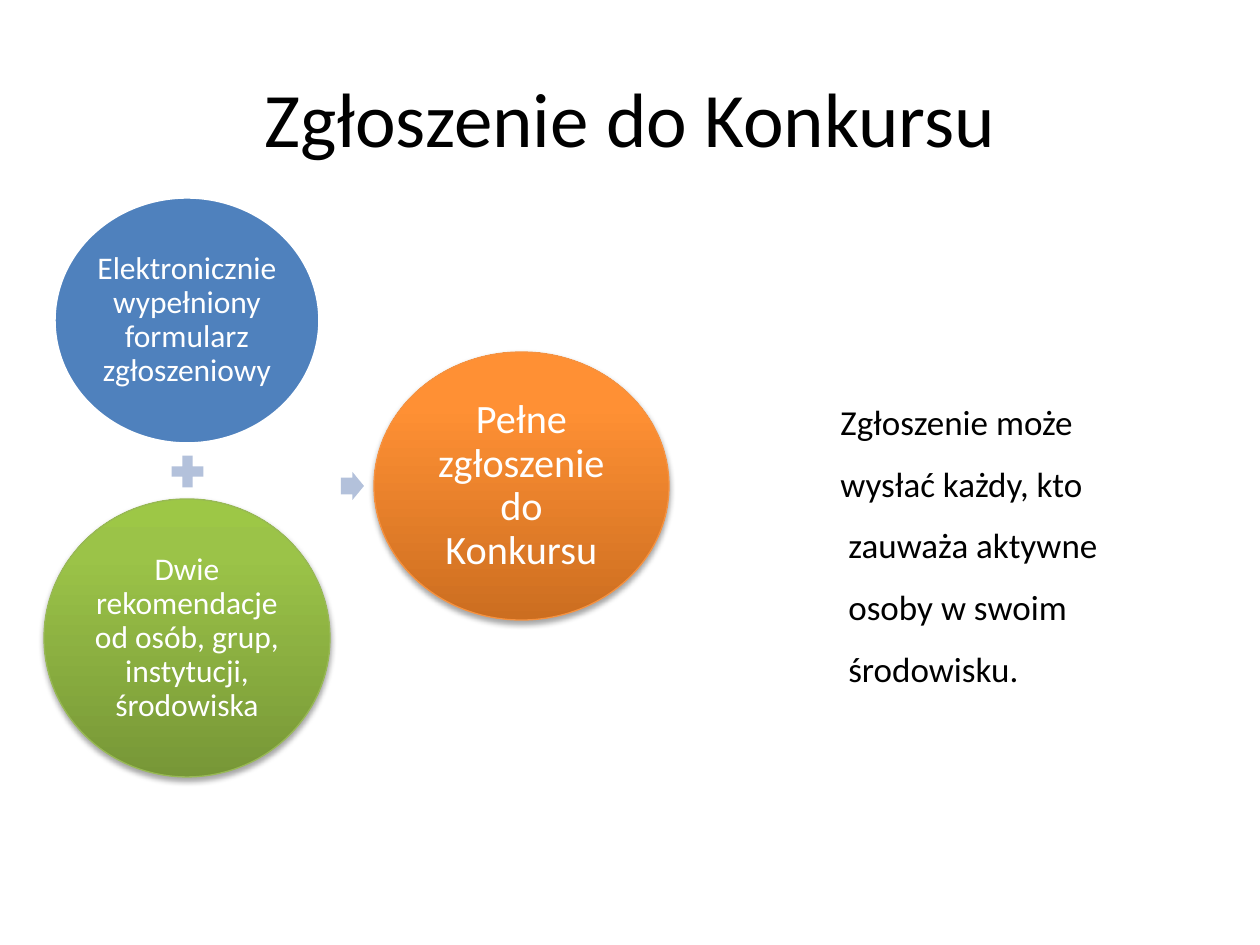
from copy import deepcopy

from lxml import etree
from pptx import Presentation
from pptx.dml.color import RGBColor
from pptx.enum.shapes import MSO_SHAPE
from pptx.enum.text import MSO_ANCHOR, PP_ALIGN
from pptx.oxml.ns import qn
from pptx.util import Pt

PX = 914400 / 126
FONT = "Calibri"
OVAL, PLUS, ARROW = MSO_SHAPE.OVAL, MSO_SHAPE.MATH_PLUS, MSO_SHAPE.RIGHT_ARROW
CENTER, LEFT = PP_ALIGN.CENTER, PP_ALIGN.LEFT

BLACK = RGBColor(0x00, 0x00, 0x00)
WHITE = RGBColor(0xFF, 0xFF, 0xFF)
BLUE = RGBColor(0x4F, 0x81, 0xBD)
PALE_BLUE = RGBColor(0xB3, 0xC1, 0xDB)
GREEN_LINE = RGBColor(0x98, 0xB9, 0x55)
GREENS = (RGBColor(0x77, 0x97, 0x37), RGBColor(0x9B, 0xC3, 0x48), RGBColor(0x9D, 0xC7, 0x46))
ORANGE_LINE = RGBColor(0xF6, 0x92, 0x40)
ORANGES = (RGBColor(0xCC, 0x6E, 0x20), RGBColor(0xFF, 0x90, 0x34), RGBColor(0xFF, 0x91, 0x36))
STOPS = (0, 0.8, 1)

TITLE = "Zgłoszenie do Konkursu"
NOTE = ["Zgłoszenie może", "wysłać każdy, kto", " zauważa aktywne",
        " osoby w swoim", " środowisku."]
# text, font size, box in px, fill colours (several make a gradient), line, line width
CIRCLES = [
    ("Elektronicznie wypełniony formularz zgłoszeniowy", 18,
     (54, 197, 266, 247), (BLUE,), WHITE, 2),
    ("Dwie rekomendacje od osób, grup, instytucji, środowiska", 18,
     (44, 499, 286, 278), GREENS, GREEN_LINE, 0.75),
    ("Pełne zgłoszenie do Konkursu", 23,
     (374, 352, 295, 268), ORANGES, ORANGE_LINE, 0.75),
]
OPERATORS = [(PLUS, (166, 450, 43, 43)), (ARROW, (341, 472, 23, 28))]


def emu(box):
    return [round(length * PX) for length in box]


def write(shape, lines, size, color, align, line_spacing=1.0, space_before=0):
    frame = shape.text_frame
    frame.word_wrap = True
    frame.vertical_anchor = MSO_ANCHOR.MIDDLE
    frame.text = "\n".join(lines)
    for paragraph in frame.paragraphs:
        paragraph.alignment = align
        paragraph.line_spacing = line_spacing
        paragraph.space_before = Pt(space_before)
        paragraph.font.name = FONT
        paragraph.font.size = Pt(size)
        paragraph.font.color.rgb = color


def add_plain_shape(slide, kind, box):
    shape = slide.shapes.add_shape(kind, *emu(box))
    shape.shadow.inherit = False
    return shape


def fill_gradient(shape, colors):
    """Fill from the bottom up, with one colour at each of STOPS."""
    shape.fill.gradient()
    shape.fill.gradient_angle = 90
    stop_list = shape._element.spPr.find(qn("a:gradFill")).find(qn("a:gsLst"))
    stop_list.append(deepcopy(stop_list[-1]))
    for stop, position, color in zip(shape.fill.gradient_stops, STOPS, colors):
        stop.position = position
        stop.color.rgb = color


def add_shadow(shape):
    effects = shape._element.spPr.find(qn("a:effectLst"))
    shadow = etree.SubElement(effects, qn("a:outerShdw"), blurRad="40000",
                              dist="23000", dir="5400000", rotWithShape="0")
    color = etree.SubElement(shadow, qn("a:srgbClr"), val="000000")
    etree.SubElement(color, qn("a:alpha"), val="35000")


def add_circle(slide, text, size, box, colors, line, line_width):
    circle = add_plain_shape(slide, OVAL, box)
    circle.line.color.rgb = line
    circle.line.width = Pt(line_width)
    if len(colors) > 1:
        fill_gradient(circle, colors)
        add_shadow(circle)
    else:
        circle.fill.solid()
        circle.fill.fore_color.rgb = colors[0]
    frame = circle.text_frame
    frame.margin_left = frame.margin_right = frame.margin_top = frame.margin_bottom = round(4 * PX)
    write(circle, [text], size, WHITE, CENTER, 0.9)


def add_operator(slide, kind, box):
    operator = add_plain_shape(slide, kind, box)
    operator.fill.solid()
    operator.fill.fore_color.rgb = PALE_BLUE
    operator.line.fill.background()
    if kind == ARROW:
        operator.adjustments[0] = 0.6
        operator.adjustments[1] = 0.5


def main():
    prs = Presentation()
    prs.slide_width, prs.slide_height = emu((1260, 945))
    slide = prs.slides.add_slide(prs.slide_layouts[6])

    title = slide.shapes.add_textbox(*emu((63, 38, 1134, 158)))
    write(title, [TITLE], 44, BLACK, CENTER)
    for circle in CIRCLES:
        add_circle(slide, *circle)
    for operator in OPERATORS:
        add_operator(slide, *operator)
    note = slide.shapes.add_textbox(*emu((828, 214, 307, 649)))
    write(note, NOTE, 20, BLACK, LEFT, 1.3, 4)

    prs.save("out.pptx")


if __name__ == "__main__":
    main()
